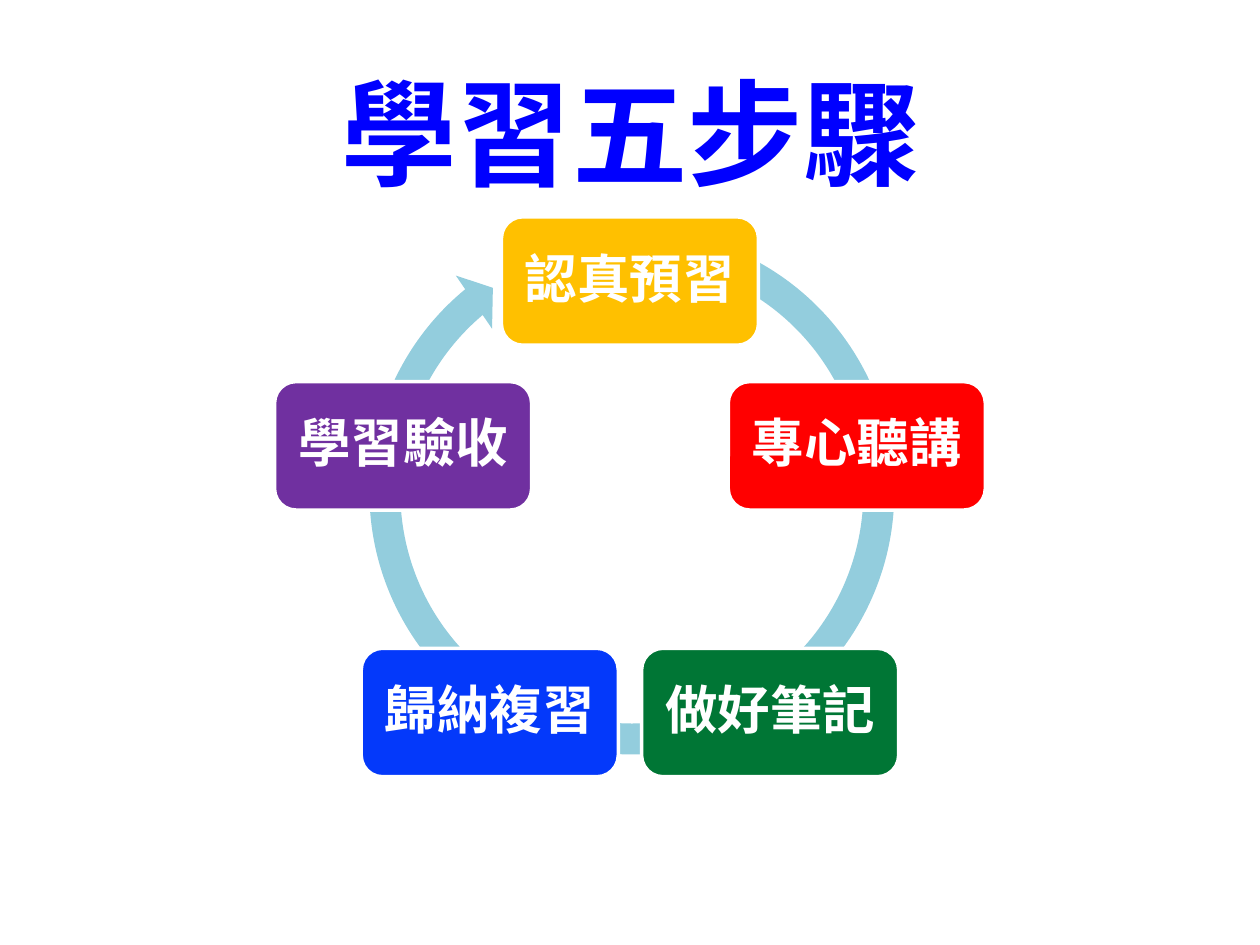
from math import cos, radians, sin

from pptx import Presentation
from pptx.dml.color import RGBColor
from pptx.enum.shapes import MSO_SHAPE as Shape
from pptx.enum.text import MSO_ANCHOR as Anchor, PP_ALIGN as Align
from pptx.oxml.ns import qn
from pptx.util import Pt

TITLE = "學習五步驟"
STEPS = [  # clockwise from the top
    ("認真預習", RGBColor(0xFF, 0xC0, 0x00)),
    ("專心聽講", RGBColor(0xFF, 0x00, 0x00)),
    ("做好筆記", RGBColor(0x00, 0x76, 0x35)),
    ("歸納複習", RGBColor(0x04, 0x39, 0xFA)),
    ("學習驗收", RGBColor(0x70, 0x30, 0xA0)),
]
FONT = "Noto Sans CJK SC"
WHITE = RGBColor(0xFF, 0xFF, 0xFF)
TITLE_BLUE = RGBColor(0x00, 0x00, 0xFF)
RING_BLUE = RGBColor(0x93, 0xCD, 0xDD)

CENTER_X, CENTER_Y, RADIUS = 360, 296.9, 136.3
STEP_WIDTH, STEP_HEIGHT = 146.9, 73.4
RING_LEFT, RING_TOP, RING_SIZE = 201.6, 121.7, 319
# Band width, head angle, end angle, start angle, head width
RING_ADJUSTMENTS = (0.0554, 3.3068, 138.152, 173.621, 0.0576)


def write(shape, text, size, color, side_margin):
    frame = shape.text_frame
    settings = {
        "word_wrap": True,
        "vertical_anchor": Anchor.MIDDLE,
        "margin_left": Pt(side_margin),
        "margin_right": Pt(side_margin),
        "margin_top": 0,
        "margin_bottom": 0,
    }
    for name, value in settings.items():
        setattr(frame, name, value)
    paragraph = frame.paragraphs[0]
    paragraph.alignment = Align.CENTER
    paragraph.line_spacing = 0.9
    span = paragraph.add_run()
    span.text = text
    for name, value in {"size": Pt(size), "bold": True, "name": FONT}.items():
        setattr(span.font, name, value)
    span.font.color.rgb = color
    # East Asian text takes its typeface from a:ea
    east_asian = span._r.get_or_add_rPr().makeelement(qn("a:ea"), {"typeface": FONT})
    span._r.rPr.append(east_asian)


def add_filled(page, kind, left, top, width, height, color):
    shape = page.shapes.add_shape(kind, Pt(left), Pt(top), Pt(width), Pt(height))
    shape.shadow.inherit = False
    shape.fill.solid()
    shape.fill.fore_color.rgb = color
    shape.line.fill.background()
    return shape


def main():
    deck = Presentation()
    deck.slide_width, deck.slide_height = Pt(720), Pt(540)
    page = deck.slides.add_slide(deck.slide_layouts[6])

    title = page.shapes.add_textbox(Pt(175.7), Pt(36.7), Pt(368.6), Pt(87.1))
    write(title, TITLE, 66, TITLE_BLUE, 7.2)

    ring = add_filled(page, Shape.CIRCULAR_ARROW, RING_LEFT, RING_TOP,
                      RING_SIZE, RING_SIZE, RING_BLUE)
    for index, value in enumerate(RING_ADJUSTMENTS):
        ring.adjustments[index] = value

    for index, (label, color) in enumerate(STEPS):
        angle = radians(360 / len(STEPS) * index)
        left = CENTER_X + RADIUS * sin(angle) - STEP_WIDTH / 2
        top = CENTER_Y - RADIUS * cos(angle) - STEP_HEIGHT / 2
        step = add_filled(page, Shape.ROUNDED_RECTANGLE, left, top,
                          STEP_WIDTH, STEP_HEIGHT, color)
        step.line.color.rgb = WHITE
        step.line.width = Pt(2)
        write(step, label, 30, WHITE, 9)

    deck.save("out.pptx")


if __name__ == "__main__":
    main()
